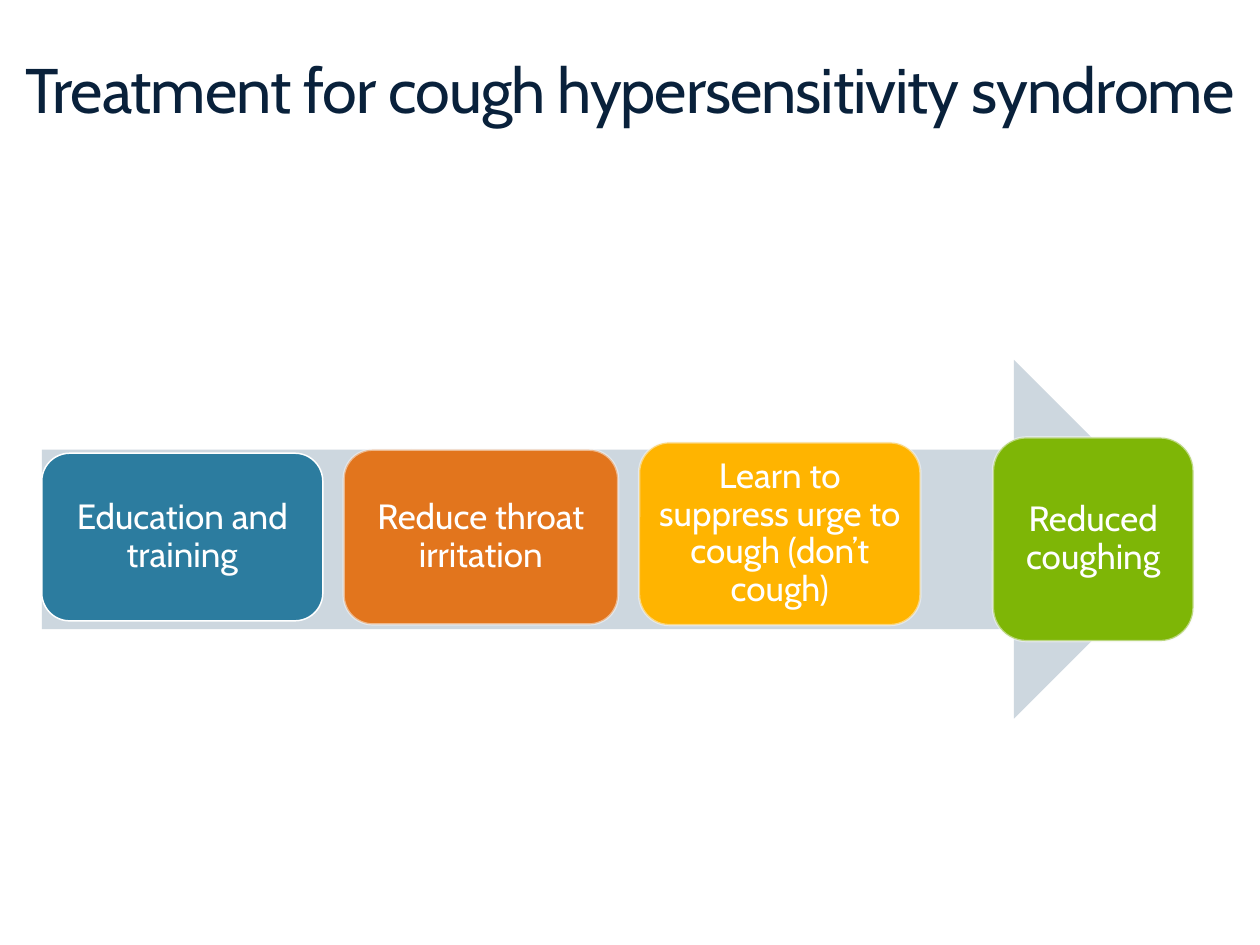
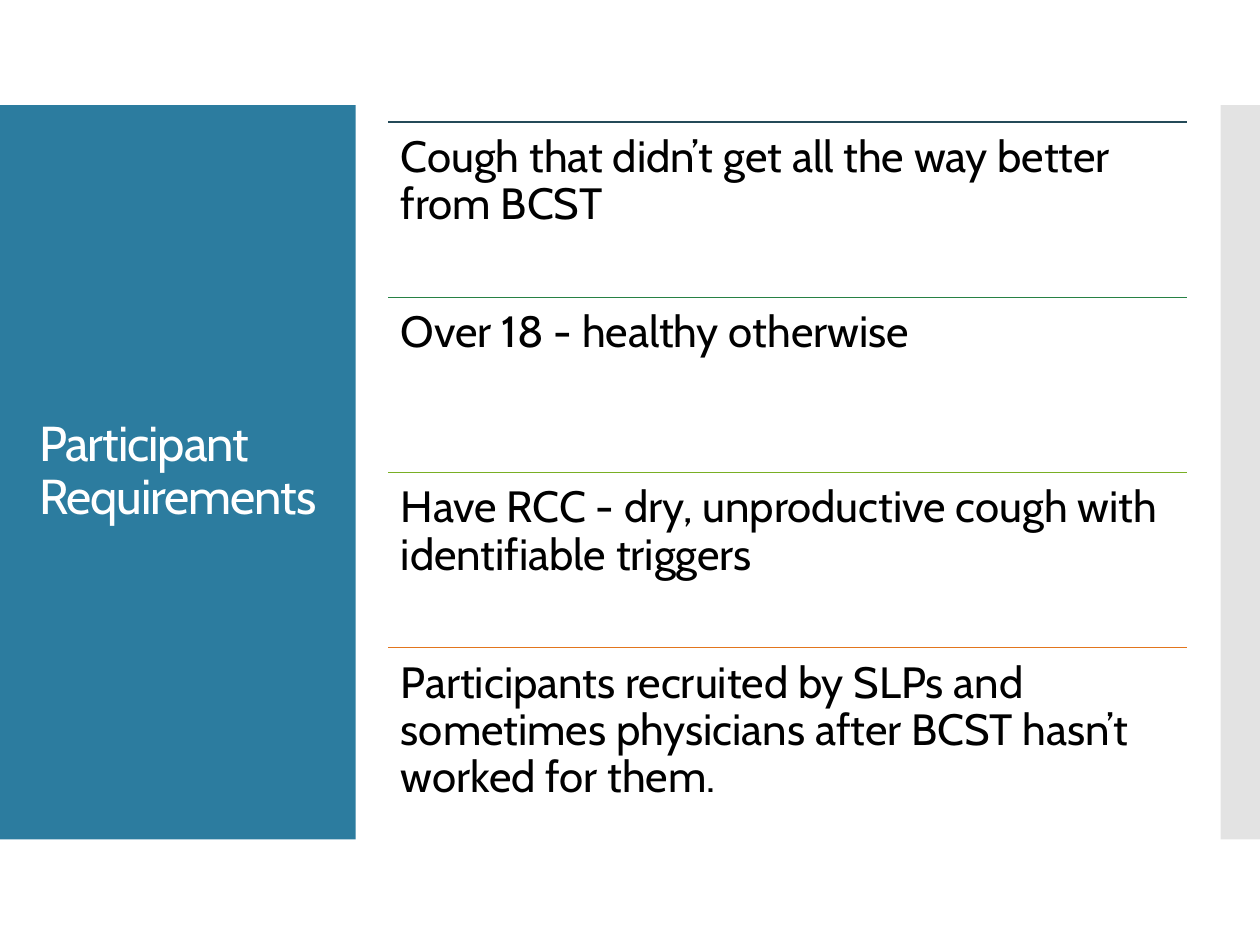
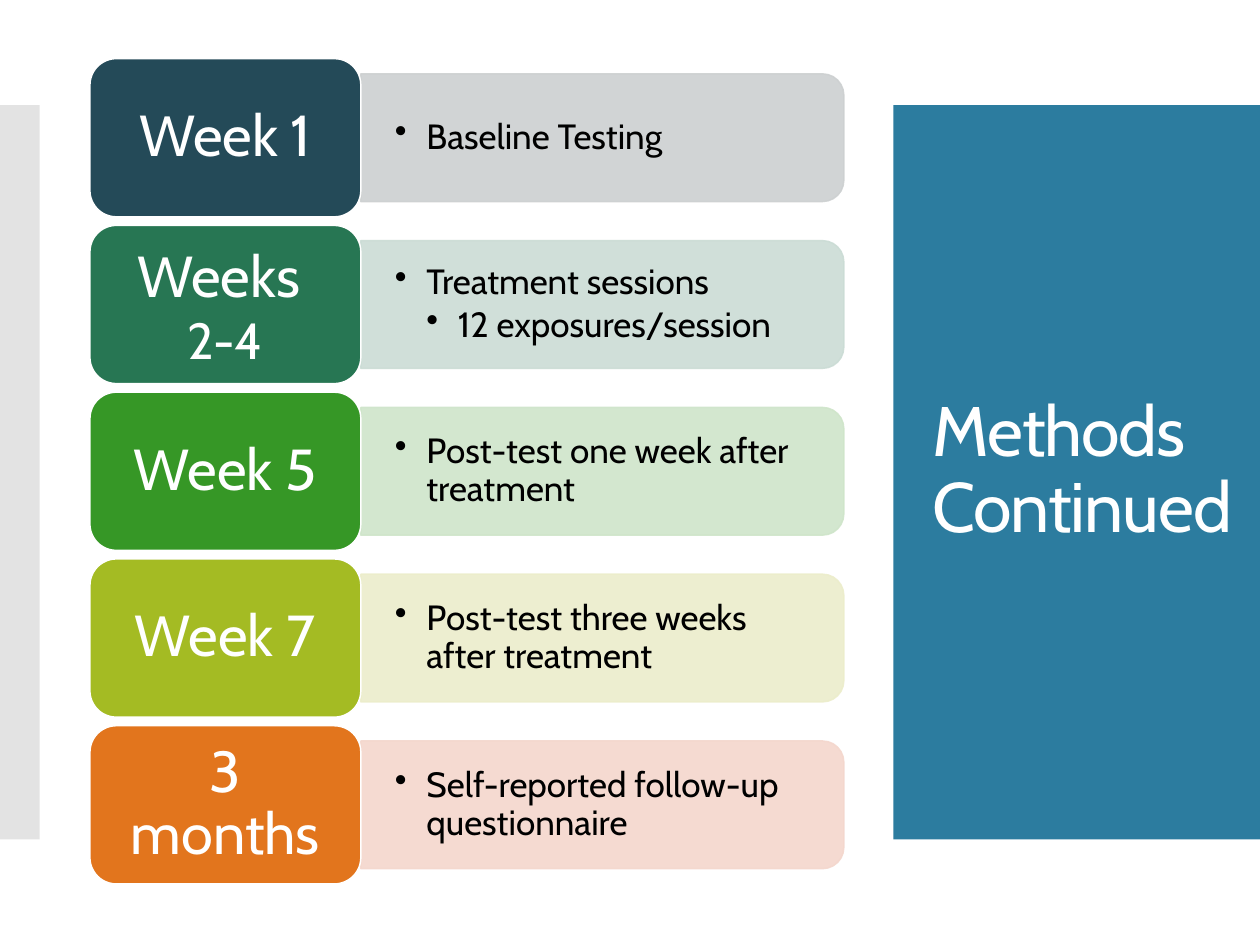
from lxml import etree
from pptx import Presentation
from pptx.dml.color import RGBColor
from pptx.enum.shapes import MSO_CONNECTOR, MSO_SHAPE
from pptx.enum.text import MSO_ANCHOR, MSO_AUTO_SIZE, PP_ALIGN
from pptx.oxml.ns import qn
from pptx.util import Pt

LEFT, CENTER = PP_ALIGN.LEFT, PP_ALIGN.CENTER
TOP, MIDDLE = MSO_ANCHOR.TOP, MSO_ANCHOR.MIDDLE
RECT, ROUND = MSO_SHAPE.RECTANGLE, MSO_SHAPE.ROUNDED_RECTANGLE
ARROW, BAR = MSO_SHAPE.RIGHT_ARROW, MSO_SHAPE.ROUND_2_SAME_RECTANGLE
LINE = MSO_CONNECTOR.STRAIGHT

FONT = "Cabin"
WHITE = RGBColor(0xFF, 0xFF, 0xFF)
BLACK = RGBColor(0, 0, 0)
NAVY = RGBColor(0x09, 0x21, 0x3B)
BLUE = RGBColor(0x2C, 0x7C, 0x9F)
GREY = RGBColor(0xC8, 0xC8, 0xC8)
PALE = RGBColor(0xCD, 0xD7, 0xDF)
EDGE = RGBColor(0xF9, 0xF9, 0xF9)
ORANGE = RGBColor(0xE2, 0x75, 0x1D)
AMBER = RGBColor(0xFF, 0xB4, 0x00)
LIME = RGBColor(0x7E, 0xB6, 0x06)
SLATE = RGBColor(0x24, 0x4A, 0x58)
PINE = RGBColor(0x27, 0x76, 0x53)
GREEN = RGBColor(0x36, 0x97, 0x26)
OLIVE = RGBColor(0xA4, 0xBB, 0x23)
FERN = RGBColor(0x27, 0x81, 0x44)
LEAF = RGBColor(0x79, 0xAF, 0x24)

# Content: text, fill, box, edge colour, edge width, edge opacity
STEPS = [
    ("Education and training", BLUE, (23.9, 259, 160.6, 95.8), WHITE, 0.85, 100),
    ("Reduce throat irritation", ORANGE, (196.4, 257, 156.8, 99.8), EDGE, 1.35, 50),
    ("Learn to suppress urge to cough (don’t cough)", AMBER,
     (365.2, 252.8, 160.8, 104.4), EDGE, 1.35, 50),
    ("Reduced coughing", LIME, (567.4, 250, 114.6, 116.4), EDGE, 1.35, 50),
]
NEEDS = [
    ("Cough that didn’t get all the way better from BCST", SLATE),
    ("Over 18 - healthy otherwise", FERN),
    ("Have RCC - dry, unproductive cough with identifiable triggers", LEAF),
    ("Participants recruited by SLPs and sometimes physicians after BCST "
     "hasn’t worked for them.", ORANGE),
]
# Label lines with sizes, line spacing, label fill, bar fill, bullets by level
WEEKS = [
    ([("Week 1", 33)], 0.9, SLATE, RGBColor(0xCD, 0xD0, 0xD1), ["Baseline Testing"]),
    ([("Weeks ", 33), ("2-4", 29)], 1, PINE, RGBColor(0xCB, 0xDC, 0xD5),
     ["Treatment sessions", "12 exposures/session"]),
    ([("Week 5", 33)], 0.9, GREEN, RGBColor(0xCF, 0xE5, 0xCA),
     ["Post-test one week after treatment"]),
    ([("Week 7", 33)], 0.9, OLIVE, RGBColor(0xEC, 0xED, 0xCB),
     ["Post-test three weeks after treatment"]),
    ([("3 months", 33)], 0.9, ORANGE, RGBColor(0xF4, 0xD7, 0xCD),
     ["Self-reported follow-up questionnaire"]),
]


def pts(box):
    return [Pt(v) for v in box]


def fade(fill, pct):
    """Set the opacity of a solid fill inside the given element."""
    if pct < 100:
        color = fill.find(qn("a:solidFill"))[0]
        etree.SubElement(color, qn("a:alpha"), val=str(pct * 1000))


def shape(slide, kind, box, fill, pct=100, edge=None, width=0.85, epct=100):
    item = slide.shapes.add_shape(kind, *pts(box))
    item.shadow.inherit = False
    item.fill.solid()
    item.fill.fore_color.rgb = fill
    fade(item._element.spPr, pct)
    if edge is None:
        item.line.fill.background()
    else:
        item.line.color.rgb = edge
        item.line.width = Pt(width)
        fade(item.line._ln, epct)
    return item


def write(item, lines, color, align=LEFT, anchor=MIDDLE, inset=(7.2, 3.6),
          space=0.9, bullets=False):
    """Fill a shape with (text, size) paragraphs."""
    frame = item.text_frame
    frame.word_wrap = True
    frame.auto_size = MSO_AUTO_SIZE.NONE
    frame.vertical_anchor = anchor
    frame.margin_left = frame.margin_right = Pt(inset[0])
    frame.margin_top = frame.margin_bottom = Pt(inset[1])
    for i, (text, size) in enumerate(lines):
        para = frame.paragraphs[0] if i == 0 else frame.add_paragraph()
        para.text = text
        para.alignment = align
        para.line_spacing = space
        if bullets:
            para.level = i + 1
            para.space_after = Pt(3)
            props = para._p.get_or_add_pPr()
            props.set("marL", str(Pt(18 * (i + 1))))
            props.set("indent", str(-Pt(18)))
            etree.SubElement(props, qn("a:buChar"), char="•")
        font = para.font
        font.name, font.size, font.color.rgb = FONT, Pt(size), color


def title(slide, text, box, size, color=WHITE, align=LEFT):
    item = slide.shapes.title
    item.left, item.top, item.width, item.height = pts(box)
    write(item, [(text, size)], color, align)
    para = item.text_frame.paragraphs[0]
    para._p.get_or_add_pPr().get_or_add_defRPr().set("spc", "-60")
    slide.shapes._spTree.append(item._element)  # in front of the bands


def bands(slide, panel, strip):
    """Blue title panel and grey strip, each given as left and width."""
    for (left, width), fill, pct in ((panel, BLUE, 100), (strip, GREY, 50)):
        shape(slide, RECT, (left, 60, width, 419.6), fill, pct)


def treatment(slide):
    title(slide, "Treatment for cough hypersensitivity syndrome",
          (0, 20, 720, 66), 36, NAVY, CENTER)
    shape(slide, ARROW, (23.9, 205.7, 658, 205), PALE)
    for text, fill, box, edge, width, pct in STEPS:
        item = shape(slide, ROUND, box, fill, 100, edge, width, pct)
        write(item, [(text, 20)], WHITE, CENTER, inset=(5.5, 5.5))


def needs(slide):
    bands(slide, (0, 203.3), (697.5, 22.5))
    title(slide, "Participant Requirements", (15.2, 88.6, 174.4, 362), 28)
    left, top, width, step = 222, 69.8, 456.4, 100.1
    for i, (text, color) in enumerate(NEEDS):
        y = top + i * step
        rule = slide.shapes.add_connector(LINE, *pts((left, y, left + width, y)))
        rule.line.color.rgb = color
        rule.line.width = Pt(0.85)
        etree.SubElement(rule._element.spPr, qn("a:effectLst"))
        item = slide.shapes.add_textbox(*pts((left, y, width, step)))
        write(item, [(text, 25)], BLACK, anchor=TOP, inset=(7.2, 7.2))


def methods(slide):
    bands(slide, (510.5, 209.5), (0, 22.7))
    title(slide, "Methods Continued", (525.6, 88.6, 186.6, 362), 40)
    left, top, width, height, step = 51.4, 33.5, 154.8, 90.4, 95.3
    long, thick = 276, 73
    edge = left + width
    for i, (label, space, dark, light, notes) in enumerate(WEEKS):
        y = top + i * step
        mid = y + height / 2
        # The bar is drawn upright, then turned about its middle
        bar = shape(slide, BAR, (edge + (long - thick) / 2, mid - long / 2, thick, long),
                    light, 90, light, epct=90)
        bar.rotation = 90
        item = slide.shapes.add_textbox(*pts((edge, mid - 33, 272.4, 66)))
        write(item, [(note, 20) for note in notes], BLACK,
              inset=(19.5, 9.8), bullets=True)
        card = shape(slide, ROUND, (left, y, width, height), dark, 100, WHITE)
        write(card, label, WHITE, CENTER, inset=(10, 5), space=space)


def main():
    deck = Presentation()
    deck.slide_width, deck.slide_height = Pt(720), Pt(540)
    for build in (treatment, needs, methods):
        build(deck.slides.add_slide(deck.slide_layouts[5]))
    deck.save("out.pptx")


if __name__ == "__main__":
    main()
